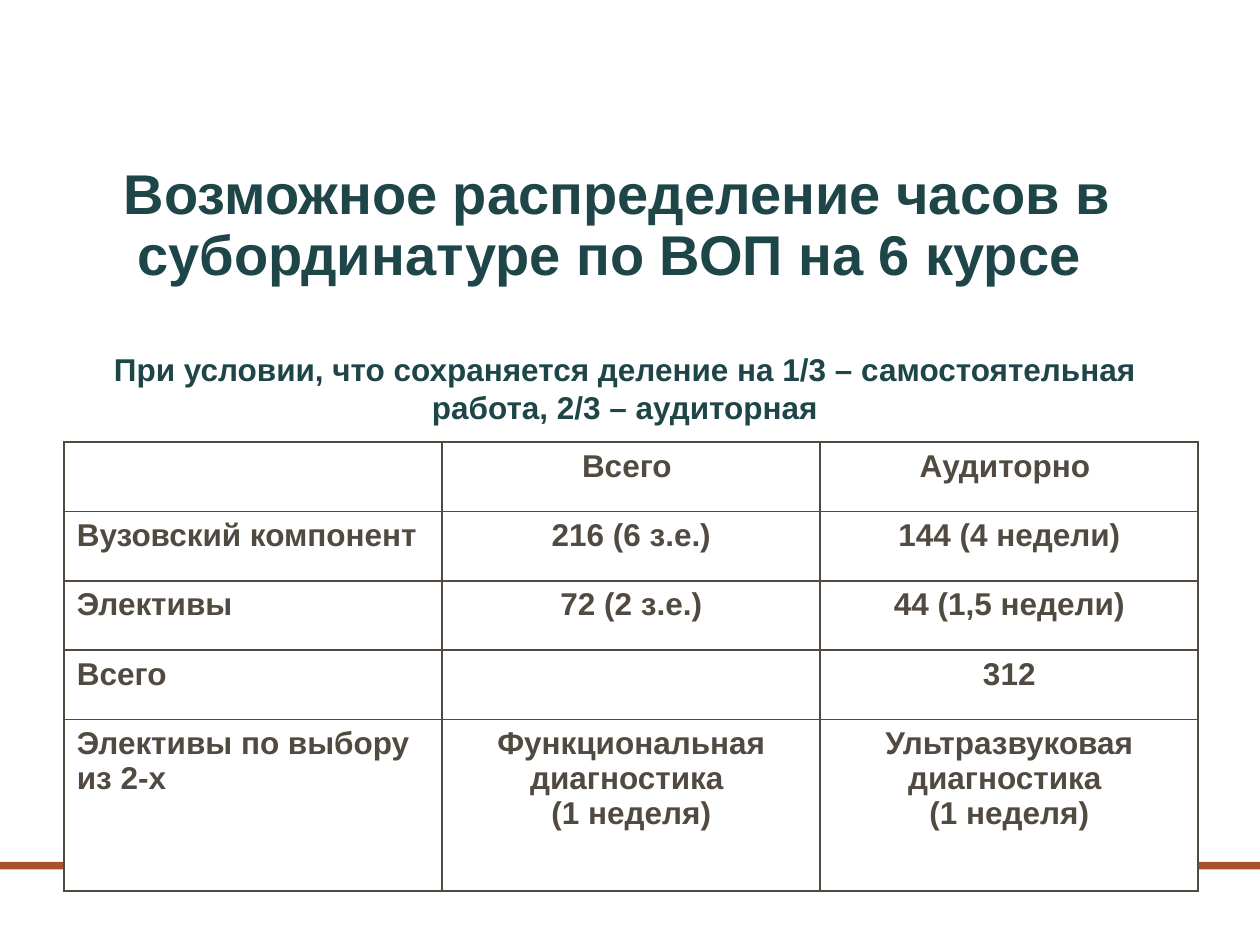
from typing import NamedTuple

from lxml.etree import SubElement
from pptx import Presentation
from pptx.dml.color import RGBColor
from pptx.enum.shapes import MSO_SHAPE
from pptx.enum.text import MSO_ANCHOR, PP_ALIGN
from pptx.oxml.ns import qn
from pptx.util import Emu, Pt

PX = 9144  # 100 px to the inch
FONT = "Arial"
COLORS = {"heading": "1E4649", "table": "514A40", "bar": "A85229", "cell": "FFFFFF"}


class Box(NamedTuple):
    left: int
    top: int
    width: int
    height: int

    def emu(self) -> list[Emu]:
        return [Emu(length * PX) for length in self]


class HoursRow(NamedTuple):
    label: str
    total: str
    classroom: str
    height: int = 55


BAR_BOX = Box(0, 684, 1000, 6)
TITLE_BOX = Box(0, 178, 980, 55)
CONDITION_BOX = Box(43, 273, 906, 71)
TABLE_BOX = Box(51, 351, 900, 356)

HOURS = [
    HoursRow("", "Всего ", "Аудиторно "),
    HoursRow("Вузовский компонент", "216 (6 з.е.)", "144 (4 недели)"),
    HoursRow("Элективы", "72 (2 з.е.)", "44 (1,5 недели)"),
    HoursRow("Всего", "", "312"),
    HoursRow(
        "Элективы по выбору из 2-х",
        "Функциональная диагностика \n(1 неделя)",
        "Ультразвуковая диагностика \n(1 неделя)",
        136,
    ),
]


def write(frame, text: str, size: int, color: str, align: PP_ALIGN) -> None:
    frame.text = text
    frame.word_wrap = True
    for paragraph in frame.paragraphs:
        paragraph.alignment = align
        font = paragraph.font
        font.name, font.size, font.bold = FONT, Pt(size), True
        font.color.rgb = RGBColor.from_string(COLORS[color])


def add_borders(cell) -> None:
    properties = cell._tc.get_or_add_tcPr()
    for position, side in enumerate(("lnL", "lnR", "lnT", "lnB")):
        line = SubElement(properties, qn(f"a:{side}"), w=str(Pt(1)))
        fill = SubElement(line, qn("a:solidFill"))
        SubElement(fill, qn("a:srgbClr"), val=COLORS["table"])
        properties.insert(position, line)  # borders come before the cell fill


def add_hours_table(slide, rows: list[HoursRow]) -> None:
    columns = 3
    table = slide.shapes.add_table(len(rows), columns, *TABLE_BOX.emu()).table
    for row_index, row in enumerate(rows):
        table.rows[row_index].height = Emu(row.height * PX)
        for column, text in enumerate((row.label, row.total, row.classroom)):
            cell = table.cell(row_index, column)
            align = PP_ALIGN.CENTER if column else PP_ALIGN.LEFT
            write(cell.text_frame, text, 18, "table", align)
            cell.fill.solid()
            cell.fill.fore_color.rgb = RGBColor.from_string(COLORS["cell"])
            add_borders(cell)


def add_bar(slide) -> None:
    bar = slide.shapes.add_shape(MSO_SHAPE.RECTANGLE, *BAR_BOX.emu())
    bar.shadow.inherit = False
    bar.fill.solid()
    bar.fill.fore_color.rgb = RGBColor.from_string(COLORS["bar"])
    bar.line.fill.background()


def main() -> None:
    presentation = Presentation()
    presentation.slide_width, presentation.slide_height = Emu(1000 * PX), Emu(750 * PX)
    slide = presentation.slides.add_slide(presentation.slide_layouts[5])

    add_bar(slide)

    title = slide.shapes.title
    title.left, title.top, title.width, title.height = TITLE_BOX.emu()
    write(title.text_frame, "Возможное распределение часов в субординатуре по ВОП на 6 курсе ",
          32, "heading", PP_ALIGN.CENTER)
    title.text_frame.vertical_anchor = MSO_ANCHOR.BOTTOM
    title.text_frame.paragraphs[0].line_spacing = 0.9

    add_hours_table(slide, HOURS)

    condition = slide.shapes.add_textbox(*CONDITION_BOX.emu())
    write(condition.text_frame,
          "При условии, что сохраняется деление на 1/3 – самостоятельная работа, 2/3 – аудиторная",
          18, "heading", PP_ALIGN.CENTER)

    presentation.save("out.pptx")


if __name__ == "__main__":
    main()
